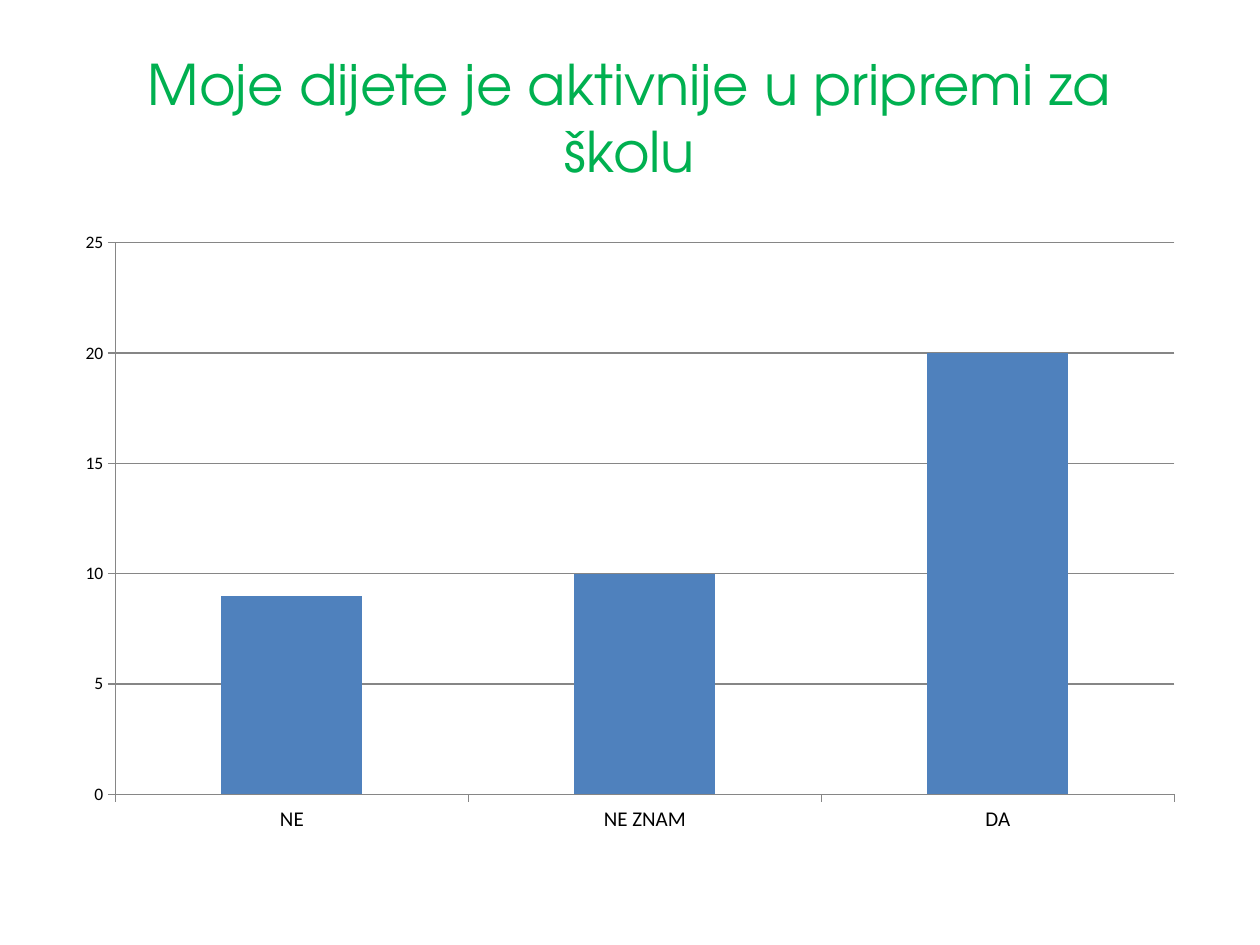
from dataclasses import dataclass

from pptx import Presentation
from pptx import util as u
from pptx.chart.data import CategoryChartData
from pptx.dml.color import RGBColor
from pptx.enum import chart as charts
from pptx.enum import text

WIDTH, HEIGHT = u.Inches(10), u.Inches(7.5)


@dataclass(frozen=True)
class Theme:
    title_font: str = "TeX Gyre Adventor"
    chart_font: str = "Calibri"
    title_size: int = 32
    value_size: int = 10
    category_size: int = 12
    title_color: str = "00B050"
    label_color: str = "000000"
    bar_color: str = "4F81BD"
    line_color: str = "868686"


THEME = Theme()


def share(left, top, width, height):
    """Turn shares of the slide's size into lengths."""
    return [round(part * side) for part, side in
            zip((left, top, width, height), (WIDTH, HEIGHT) * 2)]


def apply(target, values):
    for name, value in values.items():
        setattr(target, name, value)


def style_font(font, name, size, color):
    apply(font, {"name": name, "size": u.Pt(size)})
    font.color.rgb = RGBColor.from_string(color)


def style_line(line):
    line.width = u.Pt(0.75)
    line.color.rgb = RGBColor.from_string(THEME.line_color)


def add_title(page, words, area):
    box = page.shapes.add_textbox(*share(*area))
    apply(box.text_frame, {"word_wrap": True,
                           "vertical_anchor": text.MSO_ANCHOR.MIDDLE})
    para = box.text_frame.paragraphs[0]
    para.alignment = text.PP_ALIGN.CENTER
    span = para.add_run()
    span.text = words
    style_font(span.font, THEME.title_font, THEME.title_size, THEME.title_color)


def add_column_chart(page, answers, area):
    data = CategoryChartData()
    data.categories = list(answers)
    data.add_series("Series 1", list(answers.values()))
    chart = page.shapes.add_chart(charts.XL_CHART_TYPE.COLUMN_CLUSTERED,
                                  *share(*area), data).chart
    apply(chart, {"has_legend": False, "has_title": False})
    style_font(chart.font, THEME.chart_font, THEME.value_size, THEME.label_color)

    # Bars
    plot = chart.plots[0]
    apply(plot, {"gap_width": 150, "vary_by_categories": False})
    fill = plot.series[0].format.fill
    fill.solid()
    fill.fore_color.rgb = RGBColor.from_string(THEME.bar_color)

    # Axes and gridlines
    for axis in (chart.category_axis, chart.value_axis):
        axis.major_tick_mark = charts.XL_TICK_MARK.OUTSIDE
        style_line(axis.format.line)
    style_font(chart.category_axis.tick_labels.font, THEME.chart_font,
               THEME.category_size, THEME.label_color)
    apply(chart.value_axis, {"minimum_scale": 0, "maximum_scale": 25,
                             "major_unit": 5, "has_major_gridlines": True})
    style_line(chart.value_axis.major_gridlines.format.line)


def main():
    deck = Presentation()
    apply(deck, {"slide_width": WIDTH, "slide_height": HEIGHT})
    page = deck.slides.add_slide(deck.slide_layouts[6])

    # Survey statement
    add_title(page, "Moje dijete je aktivnije u pripremi za školu",
              (0.05, 0.04, 0.9, 1 / 6))

    # Number of answers of each kind
    add_column_chart(page, {"NE": 9, "NE ZNAM": 10, "DA": 20},
                     (0.05, 7 / 30, 0.9, 0.66))

    deck.save("out.pptx")


if __name__ == "__main__":
    main()
